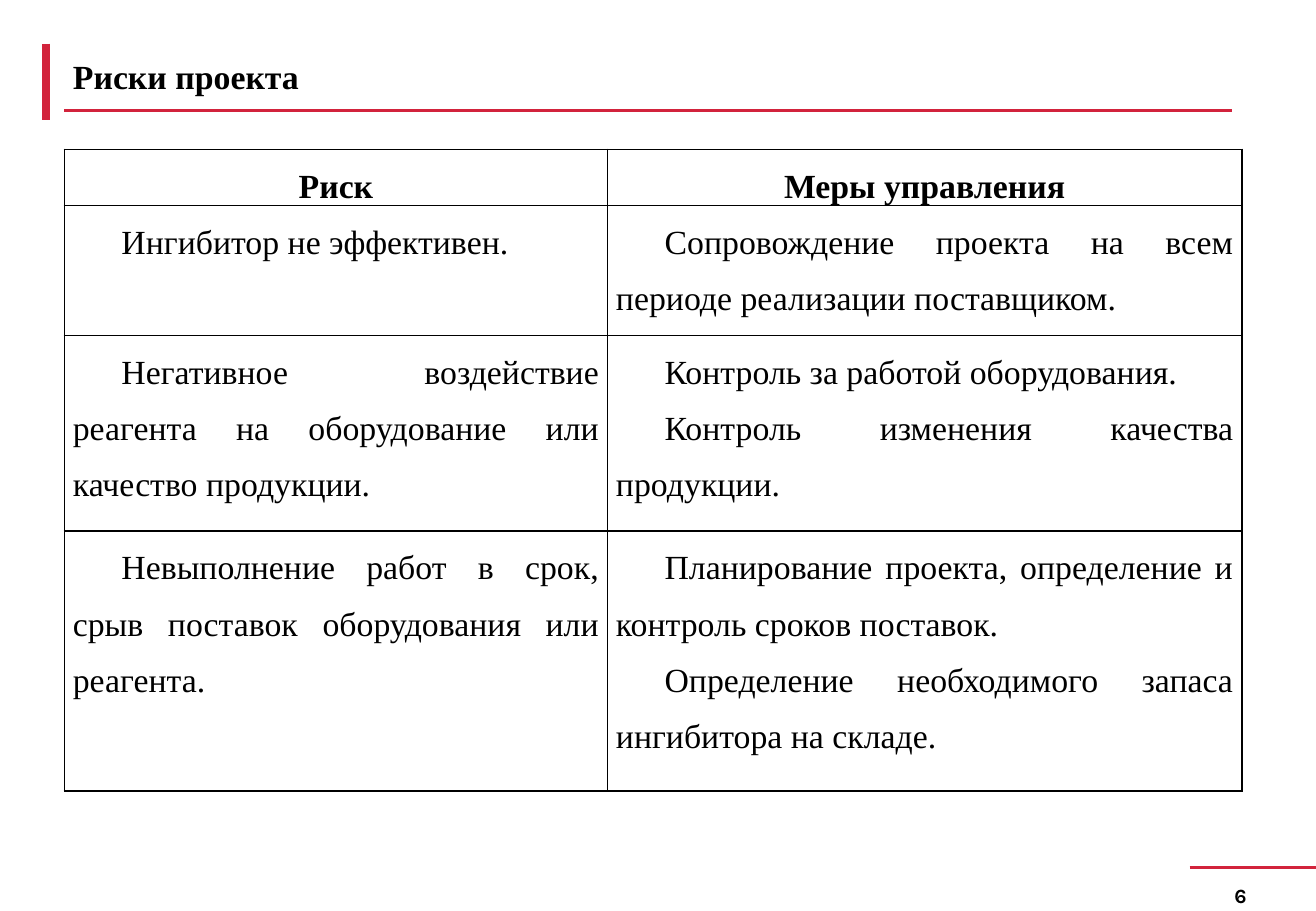
from dataclasses import dataclass

from lxml import etree
from pptx import Presentation
from pptx import util as u
from pptx.dml.color import RGBColor
from pptx.enum import shapes, text
from pptx.oxml import ns

COLORS = {"black": "000000", "accent": "D2233C", "white": "FFFFFF"}
SERIF = "Times New Roman"
BODY = {"name": SERIF, "size": u.Pt(20), "bold": False}
HEADING = {**BODY, "bold": True}
PAGE_NUMBER = {"name": "Karla", "size": u.Pt(12), "bold": True}
CELL_FORMAT = {
    "margin_left": u.Inches(0.07),
    "margin_right": u.Inches(0.07),
    "margin_top": 0,
    "margin_bottom": 0,
}
FRAME_FORMAT = {
    "margin_left": u.Inches(0.1),
    "margin_right": u.Inches(0.1),
    "margin_top": u.Inches(0.05),
    "margin_bottom": u.Inches(0.05),
    "word_wrap": True,
    "auto_size": text.MSO_AUTO_SIZE.NONE,
}


@dataclass
class Rule:
    x1: float
    y1: float
    x2: float
    y2: float
    weight: float


@dataclass
class Row:
    height: float
    risk: list[str]
    measures: list[str]


RULES = [
    Rule(9.79, 7.14, 10.83, 7.14, 1.5),
    Rule(0.38, 0.36, 0.38, 0.99, 4.75),
    Rule(0.53, 0.91, 10.14, 0.91, 2.25),
]
COLUMN_WIDTHS = [4.47, 5.22]
ROWS = [
    Row(0.46, ["Риск"], ["Меры управления"]),
    Row(
        1.07,
        ["Ингибитор не эффективен."],
        ["Сопровождение проекта на всем периоде реализации поставщиком."],
    ),
    Row(
        1.61,
        ["Негативное воздействие реагента на оборудование или качество продукции."],
        ["Контроль за работой оборудования.", "Контроль изменения качества продукции."],
    ),
    Row(
        2.14,
        ["Невыполнение работ в срок, срыв поставок оборудования или реагента."],
        [
            "Планирование проекта, определение и контроль сроков поставок.",
            "Определение необходимого запаса ингибитора на складе.",
        ],
    ),
]


def color(name: str) -> RGBColor:
    return RGBColor.from_string(COLORS[name])


def apply(target, values: dict) -> None:
    for name, value in values.items():
        setattr(target, name, value)


def write(p, content: str, font: dict) -> None:
    r = p.add_run()
    r.text = content
    apply(r.font, font)
    r.font.color.rgb = color("black")


def add_rule(s, rule: Rule) -> None:
    ends = [u.Inches(v) for v in (rule.x1, rule.y1, rule.x2, rule.y2)]
    sp = s.shapes.add_connector(shapes.MSO_CONNECTOR.STRAIGHT, *ends)
    sp.line.color.rgb = color("accent")
    sp.line.width = u.Pt(rule.weight)
    etree.SubElement(sp._element.spPr, ns.qn("a:effectLst"))


def add_borders(cell) -> None:
    tcPr = cell._tc.get_or_add_tcPr()
    for position, side in enumerate(("lnL", "lnR", "lnT", "lnB")):
        ln = etree.Element(ns.qn(f"a:{side}"), w=str(u.Pt(1)))
        fill = etree.SubElement(ln, ns.qn("a:solidFill"))
        etree.SubElement(fill, ns.qn("a:srgbClr"), val=COLORS["black"])
        tcPr.insert(position, ln)


def fill_cell(cell, paragraphs: list[str], is_header: bool) -> None:
    apply(cell, CELL_FORMAT)
    cell.vertical_anchor = text.MSO_ANCHOR.MIDDLE if is_header else text.MSO_ANCHOR.TOP
    cell.fill.background()
    add_borders(cell)
    tf = cell.text_frame
    for i, content in enumerate(paragraphs):
        p = tf.add_paragraph() if i else tf.paragraphs[0]
        p.line_spacing = 1.5
        p.alignment = text.PP_ALIGN.CENTER if is_header else text.PP_ALIGN.JUSTIFY
        if not is_header:
            p._p.get_or_add_pPr().set("indent", str(u.Inches(0.4)))
        write(p, content, HEADING if is_header else BODY)


def add_risk_table(s) -> None:
    size = u.Inches(sum(COLUMN_WIDTHS)), u.Inches(sum(row.height for row in ROWS))
    frame = s.shapes.add_table(
        len(ROWS), len(COLUMN_WIDTHS), u.Inches(0.53), u.Inches(1.23), *size
    )
    table = frame.table
    apply(table, {"first_row": False, "horz_banding": False})
    for column, width in zip(table.columns, COLUMN_WIDTHS):
        column.width = u.Inches(width)
    for i, row in enumerate(ROWS):
        table.rows[i].height = u.Inches(row.height)
        for j, paragraphs in enumerate((row.risk, row.measures)):
            fill_cell(table.cell(i, j), paragraphs, i == 0)


def add_title(s) -> None:
    sp = s.shapes.title
    box = {"left": 0.5, "top": 0.44, "width": 8.54, "height": 0.37}
    apply(sp, {name: u.Inches(value) for name, value in box.items()})
    tf = sp.text_frame
    apply(tf, FRAME_FORMAT)
    tf.vertical_anchor = text.MSO_ANCHOR.MIDDLE
    p = tf.paragraphs[0]
    p.alignment = text.PP_ALIGN.LEFT
    write(p, "Риски проекта", HEADING)


def add_page_number(s) -> None:
    box = [u.Inches(v) for v in (10.06, 7.22, 0.47, 0.28)]
    tf = s.shapes.add_textbox(*box).text_frame
    apply(tf, FRAME_FORMAT)
    write(tf.paragraphs[0], "6", PAGE_NUMBER)


def main() -> None:
    prs = Presentation()
    apply(prs, {"slide_width": u.Inches(10.83), "slide_height": u.Inches(7.5)})
    s = prs.slides.add_slide(prs.slide_layouts[5])
    s.background.fill.solid()
    s.background.fill.fore_color.rgb = color("white")
    for rule in RULES:
        add_rule(s, rule)
    add_title(s)
    add_page_number(s)
    add_risk_table(s)
    prs.save("out.pptx")


if __name__ == "__main__":
    main()
